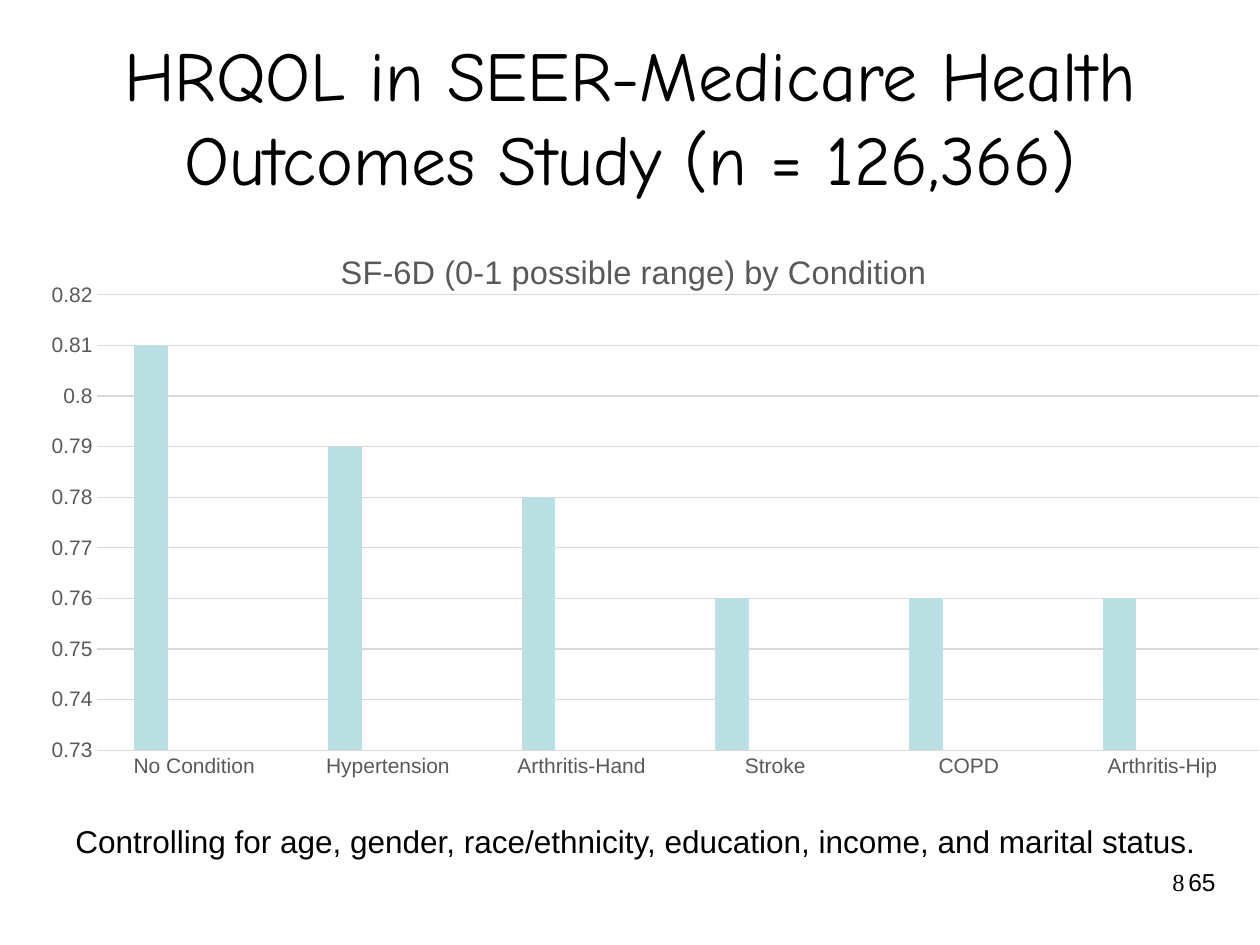
from dataclasses import dataclass

import pptx
import pptx.chart.data
import pptx.dml.color
import pptx.enum.chart
import pptx.enum.text
import pptx.oxml
import pptx.oxml.ns
import pptx.util

PX = 914400 / 126
COLORS = {"text": "000000", "muted": "595959", "grid": "D9D9D9",
          "teal": "BBE0E3", "indigo": "333399", "white": "FFFFFF"}
ALIGN = pptx.enum.text.PP_ALIGN


@dataclass
class Label:
    text: str
    x: int
    y: int
    w: int
    h: int
    size: int
    font: str = "Arial"
    align: ALIGN = ALIGN.LEFT


@dataclass
class Series:
    name: str
    values: list[float | None]
    color: str


LABELS = [
    Label("8", 903, 861, 294, 66, 14, "Times New Roman", ALIGN.RIGHT),
    Label("65", 1176, 861, 63, 42, 14),
    Label("Controlling for age, gender, race/ethnicity, education, income, and marital status.",
          63, 816, 1176, 50, 18),
]
CONDITIONS = ["No Condition", "Hypertension", "Arthritis-Hand", "Stroke", "COPD", "Arthritis-Hip"]
SERIES = [
    Series("Series 1", [0.81, 0.79, 0.78, 0.76, 0.76, 0.76], "teal"),
    Series("Series 2", [None] * len(CONDITIONS), "indigo"),
    Series("Series 3", [None] * len(CONDITIONS), "white"),
]


def px(n: int) -> int:
    return round(n * PX)


def rgb(name: str) -> pptx.dml.color.RGBColor:
    return pptx.dml.color.RGBColor.from_string(COLORS[name])


def set_font(font, size: float, color: str, name: str = "Arial") -> None:
    font.size = pptx.util.Pt(size)
    font.name = name
    font.bold = False
    font.color.rgb = rgb(color)


def set_line(line) -> None:
    line.color.rgb = rgb("grid")
    line.width = pptx.util.Pt(0.75)


def fill_text(sp, label: Label) -> None:
    sp.left, sp.top, sp.width, sp.height = map(px, (label.x, label.y, label.w, label.h))
    tf = sp.text_frame
    tf.word_wrap = True
    tf.auto_size = pptx.enum.text.MSO_AUTO_SIZE.NONE
    tf.text = label.text
    p = tf.paragraphs[0]
    p.alignment = label.align
    set_font(p.font, label.size, "text", label.font)


def set_layout(parent, inner: bool = False, **fractions: float) -> None:
    for old in parent.findall(pptx.oxml.ns.qn("c:layout")):
        parent.remove(old)
    target = '<c:layoutTarget val="inner"/>' if inner else ""
    modes = '<c:xMode val="edge"/><c:yMode val="edge"/>'
    sizes = "".join(f'<c:{key} val="{value}"/>' for key, value in fractions.items())
    layout = pptx.oxml.parse_xml(
        f'<c:layout {pptx.oxml.ns.nsdecls("c")}><c:manualLayout>'
        f"{target}{modes}{sizes}</c:manualLayout></c:layout>")
    parent.insert(0 if inner else 1, layout)


def add_condition_chart(s) -> None:
    data = pptx.chart.data.CategoryChartData()
    data.categories = CONDITIONS
    for series in SERIES:
        data.add_series(series.name, series.values)
    chart = s.shapes.add_chart(
        pptx.enum.chart.XL_CHART_TYPE.COLUMN_CLUSTERED,
        *map(px, (10, 220, 1250, 624)), data).chart
    set_font(chart.font, 10, "text")
    chart.has_legend = False

    chart.has_title = True
    tf = chart.chart_title.text_frame
    tf.text = "SF-6D (0-1 possible range) by Condition"
    set_font(tf.paragraphs[0].font, 18.6, "muted")
    set_layout(chart.chart_title._element, x=0.26, y=0.04)

    plot = chart.plots[0]
    plot.gap_width = 219
    plot.overlap = -27
    plot.vary_by_categories = False
    for drawn, series in zip(plot.series, SERIES):
        drawn.format.fill.solid()
        drawn.format.fill.fore_color.rgb = rgb(series.color)
    set_layout(chart._chartSpace.chart.plotArea, True, x=0.07, y=0.12, w=0.93, h=0.73)

    for axis in (chart.category_axis, chart.value_axis):
        axis.major_tick_mark = pptx.enum.chart.XL_TICK_MARK.NONE
        axis.minor_tick_mark = pptx.enum.chart.XL_TICK_MARK.NONE
        set_font(axis.tick_labels.font, 12, "muted")
    set_line(chart.category_axis.format.line)
    values = chart.value_axis
    values.minimum_scale, values.maximum_scale, values.major_unit = 0.73, 0.82, 0.01
    values.format.line.fill.background()
    values.has_major_gridlines = True
    set_line(values.major_gridlines.format.line)


def main() -> None:
    prs = pptx.Presentation()
    prs.slide_width, prs.slide_height = px(1260), px(945)
    s = prs.slides.add_slide(prs.slide_layouts[5])
    title = s.shapes.title
    fill_text(title, Label("HRQOL in SEER-Medicare Health Outcomes Study (n = 126,366)",
                           0, 37, 1260, 158, 40, "Comic Neue", ALIGN.CENTER))
    title.text_frame.vertical_anchor = pptx.enum.text.MSO_ANCHOR.MIDDLE
    add_condition_chart(s)
    for label in LABELS:
        fill_text(s.shapes.add_textbox(0, 0, 0, 0), label)
    prs.save("out.pptx")


if __name__ == "__main__":
    main()
